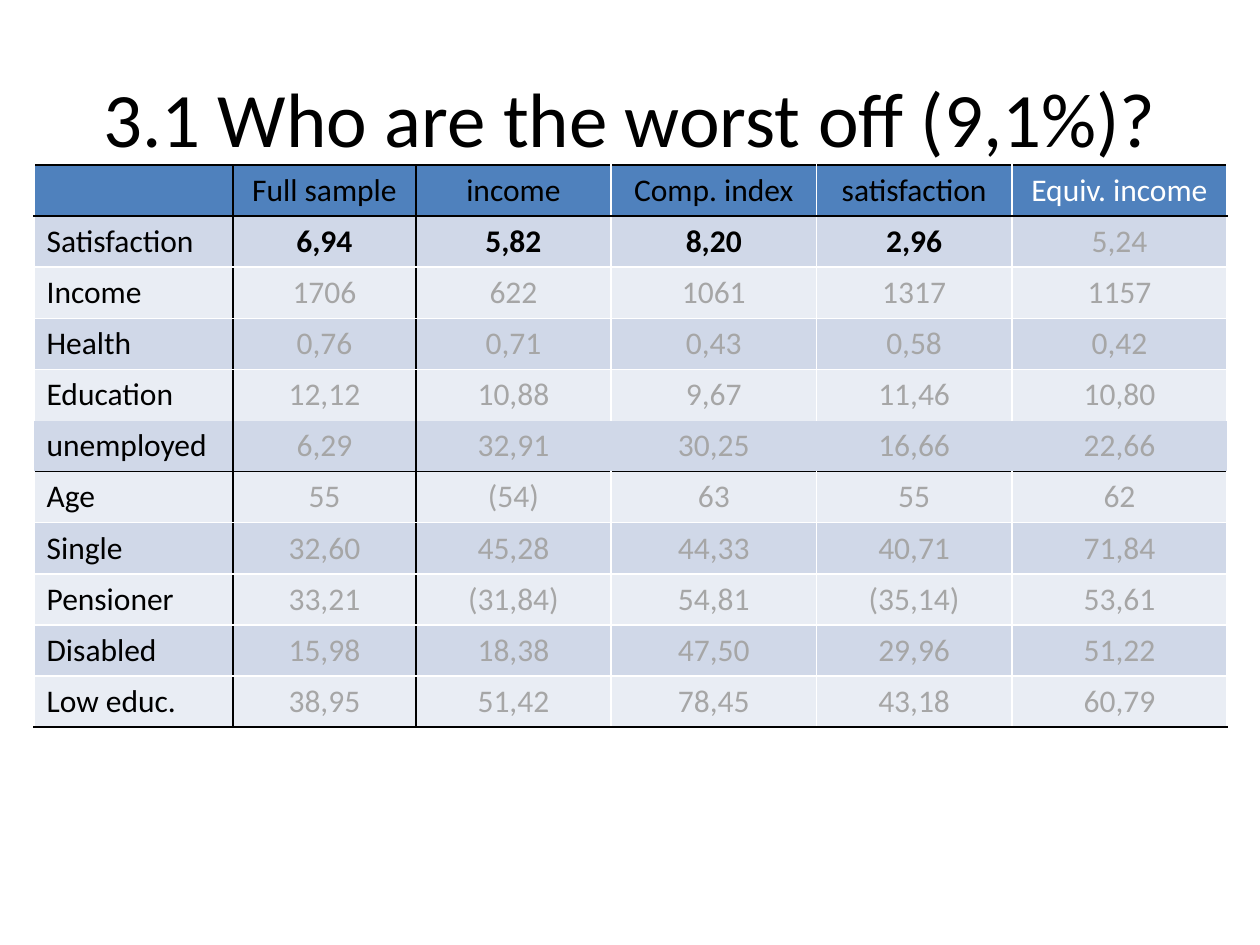
from lxml import etree
from pptx import Presentation
from pptx.dml.color import RGBColor
from pptx.enum.text import MSO_ANCHOR, PP_ALIGN
from pptx.oxml.ns import qn
from pptx.util import Inches, Pt

CENTER, LEFT, MIDDLE = PP_ALIGN.CENTER, PP_ALIGN.LEFT, MSO_ANCHOR.MIDDLE
BLACK = RGBColor(0x00, 0x00, 0x00)
WHITE = RGBColor(0xFF, 0xFF, 0xFF)
GRAY = RGBColor(0xA6, 0xA6, 0xA6)
HEADER = RGBColor(0x4F, 0x81, 0xBD)
BANDS = [RGBColor(0xE9, 0xED, 0xF4), RGBColor(0xD0, 0xD8, 0xE8)]

ROWS = [
    ["", "Full sample", "income", "Comp. index", "satisfaction", "Equiv. income"],
    ["Satisfaction", "6,94", "5,82", "8,20", "2,96", "5,24"],
    ["Income", "1706", "622", "1061", "1317", "1157"],
    ["Health", "0,76", "0,71", "0,43", "0,58", "0,42"],
    ["Education", "12,12", "10,88", "9,67", "11,46", "10,80"],
    ["unemployed", "6,29", "32,91", "30,25", "16,66", "22,66"],
    ["Age", "55", "(54)", "63", "55", "62"],
    ["Single", "32,60", "45,28", "44,33", "40,71", "71,84"],
    ["Pensioner", "33,21", "(31,84)", "54,81", "(35,14)", "53,61"],
    ["Disabled", "15,98", "18,38", "47,50", "29,96", "51,22"],
    ["Low educ.", "38,95", "51,42", "78,45", "43,18", "60,79"],
]
COL_WIDTHS = [1.58, 1.45, 1.55, 1.63, 1.55, 1.71]
TABLE_H = 4.46
BLACK_ROW_LINES = {0, 1, 6, 11}
BLACK_COL_LINES = {1, 2}
OPEN_ROW = 5  # "unemployed" has only its black lines


def format_text(p, text, align, **font):
    p.alignment = align
    r = p.add_run()
    r.text = text
    for name, value in font.items():
        if name == "color":
            r.font.color.rgb = value
        else:
            setattr(r.font, name, value)


def add_border(cell, side, color):
    """Draw one cell edge; a color of None leaves it without a line."""
    ln = etree.SubElement(cell._tc.get_or_add_tcPr(), qn(f"a:ln{side}"), w=str(Pt(1)))
    if color is None:
        etree.SubElement(ln, qn("a:noFill"))
    else:
        fill = etree.SubElement(ln, qn("a:solidFill"))
        etree.SubElement(fill, qn("a:srgbClr"), val=str(color))


prs = Presentation()
prs.slide_width, prs.slide_height = Inches(10), Inches(7.5)
s = prs.slides.add_slide(prs.slide_layouts[5])

title = s.shapes.title
box = {"left": 0.5, "top": 0.3, "width": 9, "height": 1.25}
for name, value in box.items():
    setattr(title, name, Inches(value))
title.text_frame.vertical_anchor = MIDDLE
format_text(title.text_frame.paragraphs[0], "3.1 Who are the worst off (9,1%)?",
            CENTER, name="Calibri", size=Pt(44), color=BLACK)

table = s.shapes.add_table(len(ROWS), len(COL_WIDTHS), Inches(0.27), Inches(1.31),
                           Inches(sum(COL_WIDTHS)), Inches(TABLE_H)).table
table.first_row = table.horz_banding = False
for column, width in zip(table.columns, COL_WIDTHS):
    column.width = Inches(width)

row_lines = [BLACK if i in BLACK_ROW_LINES else None if i == OPEN_ROW else WHITE
             for i in range(len(ROWS) + 1)]

for i, row in enumerate(ROWS):
    plain = None if i == OPEN_ROW else WHITE
    col_lines = [BLACK if j in BLACK_COL_LINES else plain
                 for j in range(len(COL_WIDTHS) + 1)]
    for j, text in enumerate(row):
        cell = table.cell(i, j)
        borders = {"L": col_lines[j], "R": col_lines[j + 1],
                   "T": row_lines[i], "B": row_lines[i + 1]}
        for side, color in borders.items():
            add_border(cell, side, color)
        cell.fill.solid()
        cell.fill.fore_color.rgb = HEADER if i == 0 else BANDS[i % 2]

        last = j == len(row) - 1
        highlighted = i == 1 and 0 < j and not last
        if i == 0:
            color = WHITE if last else BLACK
        else:
            color = BLACK if j == 0 or highlighted else GRAY
        if text:
            format_text(cell.text_frame.paragraphs[0], text, CENTER if j else LEFT,
                        name="Calibri", size=Pt(18), bold=highlighted, color=color)

prs.save("out.pptx")
